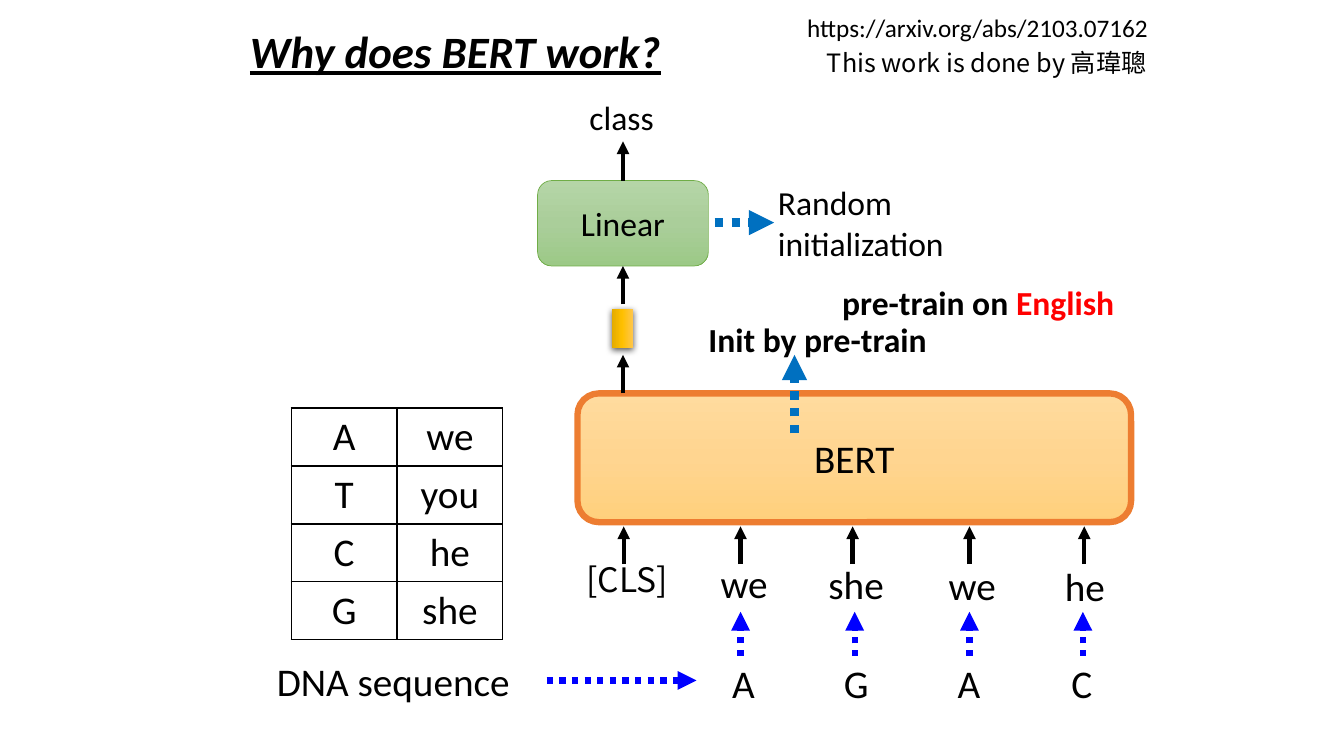
from copy import deepcopy

from lxml.etree import SubElement
from pptx import Presentation
from pptx.dml.color import RGBColor
from pptx.enum.dml import MSO_LINE
from pptx.enum.shapes import MSO_CONNECTOR, MSO_SHAPE
from pptx.enum.text import MSO_ANCHOR, PP_ALIGN
from pptx.oxml.ns import qn
from pptx.util import Pt

BLACK = RGBColor(0x00, 0x00, 0x00)
RED = RGBColor(0xFF, 0x00, 0x00)
BLUE = RGBColor(0x00, 0x00, 0xFF)
SKY = RGBColor(0x00, 0x70, 0xC0)
ORANGE = RGBColor(0xED, 0x7D, 0x31)
GREEN = RGBColor(0x70, 0xAD, 0x47)
BERT_FILL = [RGBColor(0xFF, 0xDB, 0x9E), RGBColor(0xFF, 0xD5, 0x90), RGBColor(0xFF, 0xD0, 0x7C)]
LINEAR_FILL = [RGBColor(0xB5, 0xD5, 0xA7), RGBColor(0xAA, 0xCE, 0x9A), RGBColor(0x9C, 0xC9, 0x87)]
VECTOR_FILL = [RGBColor(0xFF, 0xC6, 0x4B), RGBColor(0xFF, 0xC0, 0x00), RGBColor(0xE3, 0xAB, 0x00)]

CALIBRI = "Calibri"
NOTO = "Noto Sans CJK SC"
ARIAL = "Arial"
LEFT, CENTER, RIGHT = PP_ALIGN.LEFT, PP_ALIGN.CENTER, PP_ALIGN.RIGHT


class Deck:
    def __init__(self, slide):
        self.slide = slide
        self.shapes = slide.shapes

    def run(self, p, text, size, font=CALIBRI, color=BLACK, bold=False, italic=False, underline=False):
        r = p.add_run()
        r.text = text
        f = r.font
        f.name, f.size, f.bold = font, Pt(size), bold
        f.italic, f.underline = italic, underline
        f.color.rgb = color

    def text(self, x, y, w, h, text="", size=24, align=LEFT, wrap=True, **style):
        tf = self.shapes.add_textbox(Pt(x), Pt(y), Pt(w), Pt(h)).text_frame
        tf.word_wrap = wrap
        p = tf.paragraphs[0]
        p.alignment = align
        if text:
            self.run(p, text, size, **style)
        return p

    def box(self, kind, x, y, w, h, colors, line=None, width=0, text="", size=24):
        sp = self.shapes.add_shape(kind, Pt(x), Pt(y), Pt(w), Pt(h))
        sp.shadow.inherit = False
        sp.fill.gradient()
        sp.fill.gradient_angle = 270
        stops = sp._element.spPr.find(".//" + qn("a:gsLst"))
        stops.insert(1, deepcopy(stops[0]))
        for i, (stop, color) in enumerate(zip(sp.fill.gradient_stops, colors)):
            stop.position = i / 2
            stop.color.rgb = color
        if line is None:
            sp.line.fill.background()
        else:
            sp.line.color.rgb = line
            sp.line.width = Pt(width)
        if text:
            tf = sp.text_frame
            tf.vertical_anchor = MSO_ANCHOR.MIDDLE
            p = tf.paragraphs[0]
            p.alignment = CENTER
            self.run(p, text, size)
        return sp

    def drop_shadow(self, sp):
        effects = sp._element.spPr.find(qn("a:effectLst"))
        shadow = SubElement(effects, qn("a:outerShdw"), blurRad=str(Pt(4.5)), dist=str(Pt(1.5)),
                            dir="5400000", algn="ctr", rotWithShape="0")
        color = SubElement(shadow, qn("a:srgbClr"), val=str(BLACK))
        SubElement(color, qn("a:alpha"), val="63000")

    def arrow(self, x1, y1, x2, y2, color=BLACK, width=3, dotted=False):
        c = self.shapes.add_connector(MSO_CONNECTOR.STRAIGHT, Pt(x1), Pt(y1), Pt(x2), Pt(y2))
        c.line.color.rgb = color
        c.line.width = Pt(width)
        if dotted:
            c.line.dash_style = MSO_LINE.ROUND_DOT
        spPr = c._element.spPr
        SubElement(spPr.find(qn("a:ln")), qn("a:tailEnd"), type="triangle")
        SubElement(spPr, qn("a:effectLst"))
        return c

    def table(self, x, y, col_w, row_h, rows, size):
        n, m = len(rows), len(rows[0])
        tbl = self.shapes.add_table(n, m, Pt(x), Pt(y), Pt(col_w * m), Pt(row_h * n)).table
        tbl.first_row = tbl.horz_banding = False
        for i, row in enumerate(rows):
            for j, text in enumerate(row):
                cell = tbl.cell(i, j)
                p = cell.text_frame.paragraphs[0]
                p.alignment = CENTER
                self.run(p, text, size)
                tcPr = cell._tc.get_or_add_tcPr()
                for side in ("a:lnL", "a:lnR", "a:lnT", "a:lnB"):
                    ln = SubElement(tcPr, qn(side), w=str(Pt(1)))
                    fill = SubElement(ln, qn("a:solidFill"))
                    SubElement(fill, qn("a:srgbClr"), val=str(BLACK))
                cell.fill.background()


def main():
    prs = Presentation()
    prs.slide_width, prs.slide_height = Pt(960), Pt(540)
    s = Deck(prs.slides.add_slide(prs.slide_layouts[6]))

    s.text(171.5, 13.5, 308, 46, "Why does BERT work?", 32, bold=True, italic=True, underline=True)
    s.text(569.5, 5, 267, 29, "https://arxiv.org/abs/2103.07162", 18)
    p = s.text(495.5, 30, 330.5, 29, align=RIGHT)
    s.run(p, "This work is done by ", 18, NOTO)
    s.run(p, "高瑋聰", 18, ARIAL)

    s.table(208, 291.5, 75.6, 41.4, [("A", "we"), ("T", "you"), ("C", "he"), ("G", "she")], 28)

    s.box(MSO_SHAPE.ROUNDED_RECTANGLE, 412.5, 281, 395.5, 92, BERT_FILL, ORANGE, 4.5, "BERT", 28)
    linear = s.box(MSO_SHAPE.ROUNDED_RECTANGLE, 384, 129, 122, 61, LINEAR_FILL, GREEN, 0.5, "Linear")
    vector = s.box(MSO_SHAPE.RECTANGLE, 430.5, 227, 28, 15, VECTOR_FILL)
    vector.rotation = 90
    s.drop_shadow(vector)

    s.arrow(445, 281, 445, 253.5)
    s.arrow(445, 217.5, 445, 190).end_connect(linear, 2)
    s.arrow(445, 129, 445, 101).begin_connect(linear, 0)
    s.text(414, 65.5, 61, 36, "class", wrap=False)

    s.arrow(510.5, 159, 553, 159, SKY, 6, True)
    s.text(548.5, 126.5, 150.5, 65.5, "Random initialization")
    s.arrow(567.5, 309.5, 567.5, 253.5, SKY, 6, True)
    s.text(484, 224, 200, 36, "Init by pre-train", align=CENTER, bold=True)
    p = s.text(594.5, 197.5, 266.5, 36)
    s.run(p, "pre-train on ", 24, bold=True)
    s.run(p, "English", 24, color=RED, bold=True)

    s.text(404, 396, 88, 36, "[CLS]", align=CENTER, font=NOTO)
    s.arrow(445.5, 403, 445.5, 376)
    tokens = [
        ("A", "we", 531.5, 396, 529, 529),
        ("G", "she", 611.5, 396.5, 609, 610.5),
        ("A", "we", 694.5, 397.5, 692.5, 692.5),
        ("C", "he", 775, 398, 774.5, 773.5),
    ]
    for i, (base, word, word_x, word_y, input_x, map_x) in enumerate(tokens):
        s.text(497.5 + 80.6 * i, 467.5, 67, 41, base, 28, CENTER)
        s.arrow(map_x, 468.5, map_x, 437, BLUE, 4.5, True)
        s.text(word_x - 33.5, word_y, 67, 41, word, 28, CENTER)
        s.arrow(input_x, 403, input_x, 376)

    s.text(152, 466, 264, 41, "DNA sequence ", 28, CENTER)
    s.arrow(390.5, 486, 497.5, 486, BLUE, 4.5, True)

    prs.save("out.pptx")


if __name__ == "__main__":
    main()
